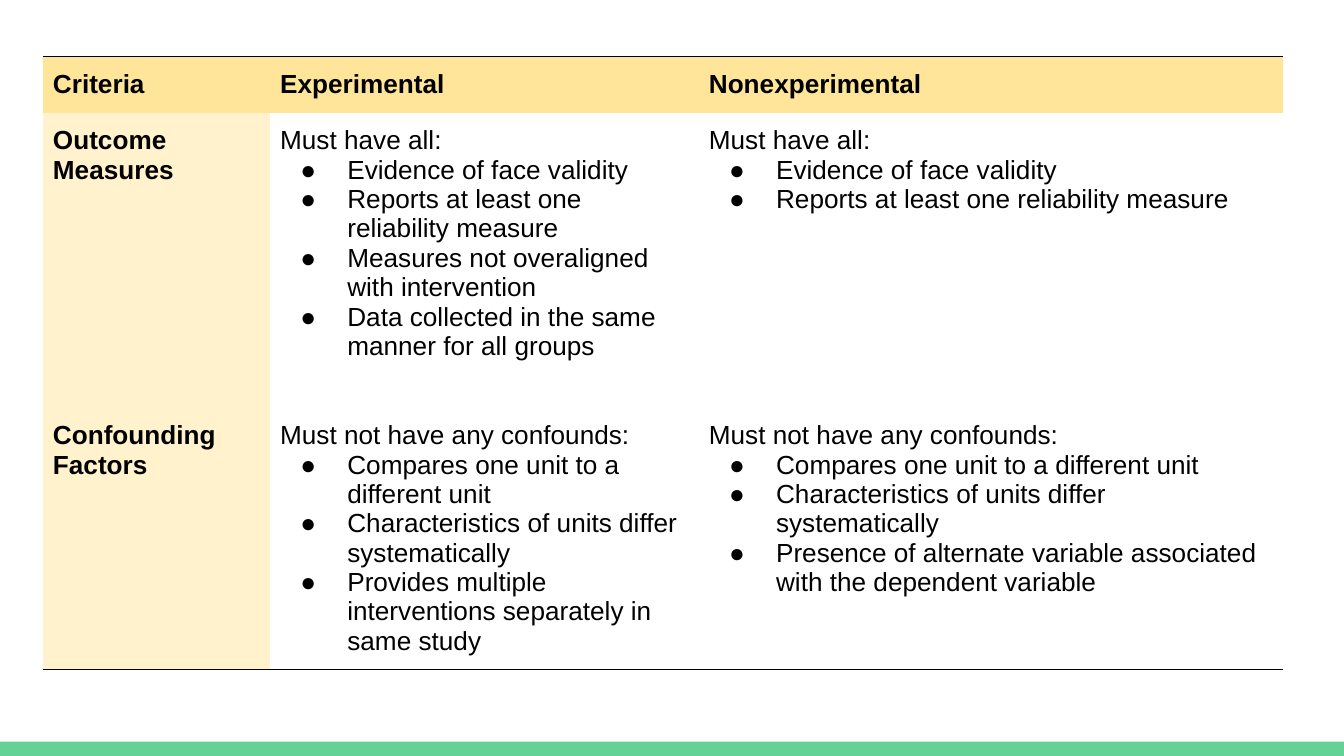
"""Build a slide with a table of criteria for experimental and nonexperimental studies."""
from dataclasses import dataclass

import lxml.etree
import pptx
import pptx.dml.color
import pptx.enum.shapes
import pptx.oxml.ns
import pptx.util

Pt = pptx.util.Pt
qn = pptx.oxml.ns.qn

COLORS = {
    "text": "000000",
    "header": "FFE599",
    "label": "FFF2CC",
    "body": "FFFFFF",
    "footer": "63D297",
}
FONT_NAME = "Arial"
FONT_SIZE = 14
COLUMN_WIDTHS = (121.7, 229.7, 313.2)
ROW_HEIGHTS = (30, 158, 140)


@dataclass(frozen=True)
class Entry:
    heading: str
    bullets: tuple[str, ...] = ()
    bold: bool = False
    fill: str = "body"


def header(text: str) -> Entry:
    """Return a header cell."""
    return Entry(text, bold=True, fill="header")


def label(text: str) -> Entry:
    """Return a row label cell."""
    return Entry(text, bold=True, fill="label")


ALL = "Must have all:"
NONE = "Must not have any confounds:"
VALIDITY = (
    "Evidence of face validity",
    "Reports at least one reliability measure",
)
CONFOUNDS = (
    "Compares one unit to a different unit",
    "Characteristics of units differ systematically",
)
ROWS = (
    (header("Criteria"), header("Experimental"), header("Nonexperimental")),
    (
        label("Outcome Measures"),
        Entry(ALL, VALIDITY + (
            "Measures not overaligned with intervention",
            "Data collected in the same manner for all groups",
        )),
        Entry(ALL, VALIDITY),
    ),
    (
        label("Confounding Factors"),
        Entry(NONE, CONFOUNDS + (
            "Provides multiple interventions separately in same study",
        )),
        Entry(NONE, CONFOUNDS + (
            "Presence of alternate variable associated with the dependent variable",
        )),
    ),
)


def rgb(name: str) -> pptx.dml.color.RGBColor:
    """Look up a named colour."""
    return pptx.dml.color.RGBColor.from_string(COLORS[name])


def add_color(parent, name: str) -> None:
    """Append a colour element to an XML parent."""
    lxml.etree.SubElement(parent, qn("a:srgbClr"), val=COLORS[name])


def set_borders(cell, visible: set[str]) -> None:
    """Draw the visible sides of a cell and clear the others."""
    properties = cell._tc.get_or_add_tcPr()
    for side in ("L", "R", "T", "B"):
        line = lxml.etree.SubElement(properties, qn(f"a:ln{side}"), w=str(Pt(1)))
        if side in visible:
            add_color(lxml.etree.SubElement(line, qn("a:solidFill")), "text")
        else:
            lxml.etree.SubElement(line, qn("a:noFill"))


def set_bullet(paragraph) -> None:
    """Give a paragraph a round bullet and a hanging indent."""
    properties = paragraph._p.get_or_add_pPr()
    properties.set("marL", str(Pt(36)))
    properties.set("indent", str(Pt(-25.2)))
    add_color(lxml.etree.SubElement(properties, qn("a:buClr")), "text")
    lxml.etree.SubElement(properties, qn("a:buFont"), typeface=FONT_NAME)
    lxml.etree.SubElement(properties, qn("a:buChar"), char="●")


def fill_cell(cell, entry: Entry, borders: set[str]) -> None:
    """Write and format one table cell."""
    cell.margin_left = cell.margin_right = Pt(5.4)
    cell.margin_top = cell.margin_bottom = Pt(7.2)
    set_borders(cell, borders)
    cell.fill.solid()
    cell.fill.fore_color.rgb = rgb(entry.fill)
    cell.text = "\n".join((entry.heading, *entry.bullets))
    for index, paragraph in enumerate(cell.text_frame.paragraphs):
        if index:
            set_bullet(paragraph)
        font = paragraph.font
        font.name = FONT_NAME
        font.size = Pt(FONT_SIZE)
        font.bold = entry.bold
        font.color.rgb = rgb("text")


def add_criteria_table(slide) -> None:
    """Add the table with rules above the first and below the last row."""
    table = slide.shapes.add_table(
        len(ROWS), len(COLUMN_WIDTHS), Pt(23), Pt(30.2),
        Pt(sum(COLUMN_WIDTHS)), Pt(sum(ROW_HEIGHTS)),
    ).table
    table.first_row = table.horz_banding = False
    for column, width in zip(table.columns, COLUMN_WIDTHS):
        column.width = Pt(width)
    for row, height in zip(table.rows, ROW_HEIGHTS):
        row.height = Pt(height)
    rules = ({"T"}, set(), {"B"})
    for row, entries, borders in zip(table.rows, ROWS, rules):
        for cell, entry in zip(row.cells, entries):
            fill_cell(cell, entry, borders)


def add_footer_bar(slide) -> None:
    """Add the coloured strip along the bottom edge."""
    bar = slide.shapes.add_shape(
        pptx.enum.shapes.MSO_SHAPE.RECTANGLE, Pt(0), Pt(397.4), Pt(720), Pt(7.6)
    )
    bar.shadow.inherit = False
    bar.fill.solid()
    bar.fill.fore_color.rgb = rgb("footer")
    bar.line.fill.background()


def main() -> None:
    """Create and save the presentation."""
    presentation = pptx.Presentation()
    presentation.slide_width = Pt(720)
    presentation.slide_height = Pt(405)
    slide = presentation.slides.add_slide(presentation.slide_layouts[6])
    add_footer_bar(slide)
    add_criteria_table(slide)
    presentation.save("out.pptx")


if __name__ == "__main__":
    main()
